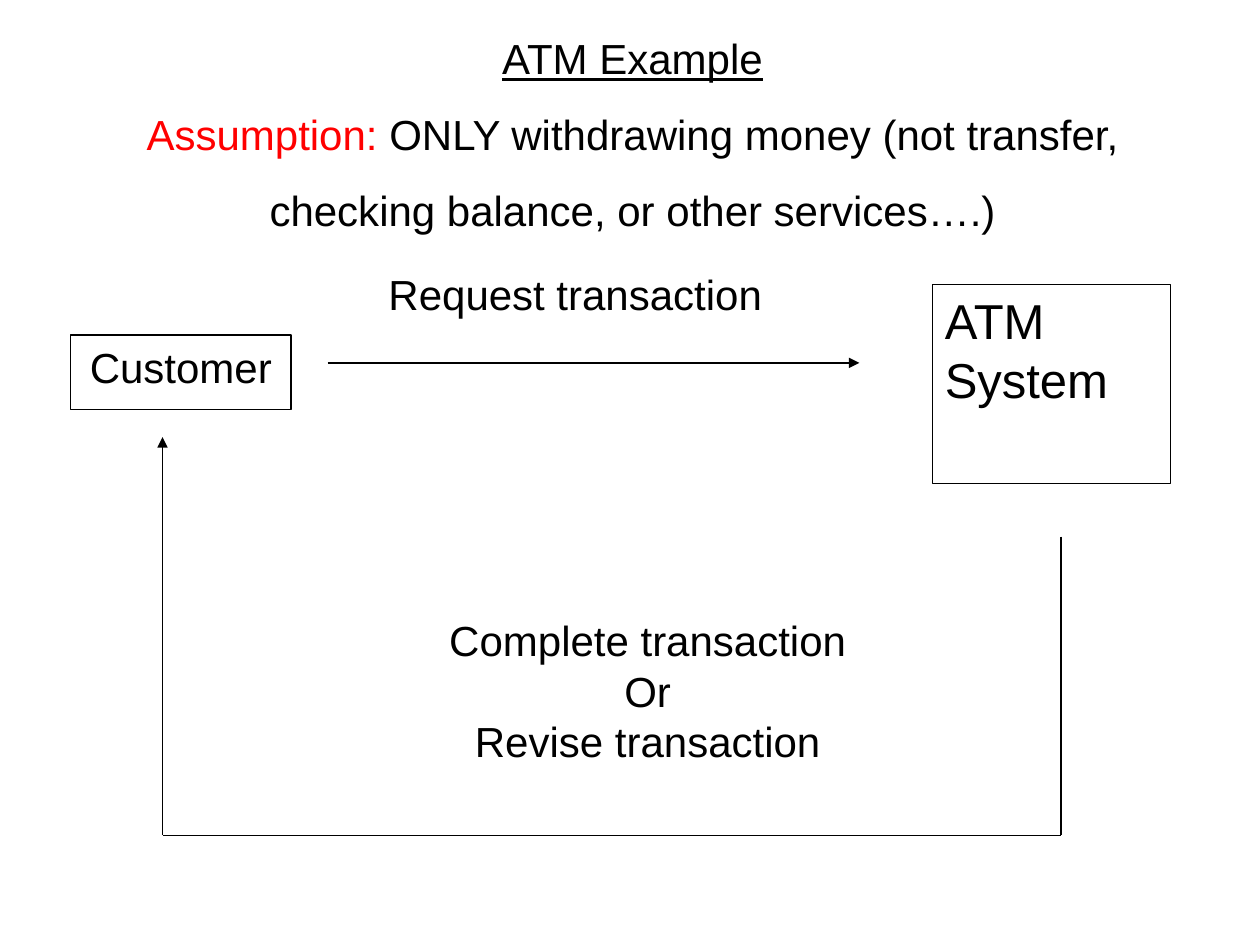
"""Build the ATM example slide with its request and response flow."""
from lxml.etree import SubElement
from pptx import Presentation
from pptx.dml.color import RGBColor
from pptx.enum.shapes import MSO_CONNECTOR, MSO_SHAPE
from pptx.enum.text import MSO_ANCHOR, PP_ALIGN
from pptx.oxml.ns import qn
from pptx.util import Inches, Pt

presentation = Presentation()
presentation.slide_width = Inches(10)
presentation.slide_height = Inches(7.5)
column = presentation.slide_width / 100
row = presentation.slide_height / 75
slide = presentation.slides.add_slide(presentation.slide_layouts[6])


def color(value):
    return RGBColor.from_string(value)


def add_run(paragraph, text, size=24, fill="000000", underline=False):
    run = paragraph.add_run()
    run.text = text
    run.font.name = "Arial"
    run.font.size = Pt(size)
    run.font.underline = underline
    run.font.color.rgb = color(fill)


title = slide.shapes.add_textbox(
    round(5.2 * column), round(2.5 * row), round(90 * column), round(14.2 * row))
title.text_frame.word_wrap = True
title.text_frame.vertical_anchor = MSO_ANCHOR.MIDDLE
heading = title.text_frame.paragraphs[0]
heading.alignment = PP_ALIGN.CENTER
heading.line_spacing = 1.5
add_run(heading, "ATM Example", underline=True)
heading.add_line_break()
add_run(heading, "Assumption: ", fill="FF0000")
add_run(heading, "ONLY withdrawing money (not transfer, checking balance, or other services….)")

boxes = [
    (5.6, 26.6, 17.5, 5.9, "000000", 24, PP_ALIGN.CENTER, ["Customer"]),
    (74, 22.6, 18.9, 15.8, "000000", 28, PP_ALIGN.LEFT, ["ATM System"]),
    (32.5, 48.3, 37.8, 15.8, "FFFFFF", 24, PP_ALIGN.CENTER,
     ["Complete transaction", "Or", "Revise transaction"]),
    (28.9, 20.8, 33.5, 5.9, "FFFFFF", 24, PP_ALIGN.CENTER, ["Request transaction"]),
]
for left, top, width, height, outline, size, alignment, texts in boxes:
    box = slide.shapes.add_shape(
        MSO_SHAPE.RECTANGLE, round(left * column), round(top * row),
        round(width * column), round(height * row))
    box.shadow.inherit = False
    box.fill.solid()
    box.fill.fore_color.rgb = color("FFFFFF")
    box.line.color.rgb = color(outline)
    box.line.width = Pt(0.75)
    frame = box.text_frame
    frame.word_wrap = True
    frame.vertical_anchor = MSO_ANCHOR.TOP
    for index, text in enumerate(texts):
        paragraph = frame.add_paragraph() if index else frame.paragraphs[0]
        paragraph.alignment = alignment
        add_run(paragraph, text, size)

customer_x, system_x, return_y = 12.9, 84.2, 66.3
arrows = [
    (26, 28.8, 68.2, 28.8, True),
    (system_x, 42.6, system_x, return_y, False),
    (system_x, return_y, customer_x, return_y, False),
    (customer_x, return_y, customer_x, 34.7, True),
]
for start_x, start_y, end_x, end_y, has_head in arrows:
    connector = slide.shapes.add_connector(
        MSO_CONNECTOR.STRAIGHT, round(start_x * column), round(start_y * row),
        round(end_x * column), round(end_y * row))
    connector.line.color.rgb = color("000000")
    connector.line.width = Pt(0.75)
    properties = connector.element.spPr
    if has_head:
        SubElement(properties.find(qn("a:ln")), qn("a:tailEnd"), type="triangle")
    SubElement(properties, qn("a:effectLst"))

presentation.save("out.pptx")
